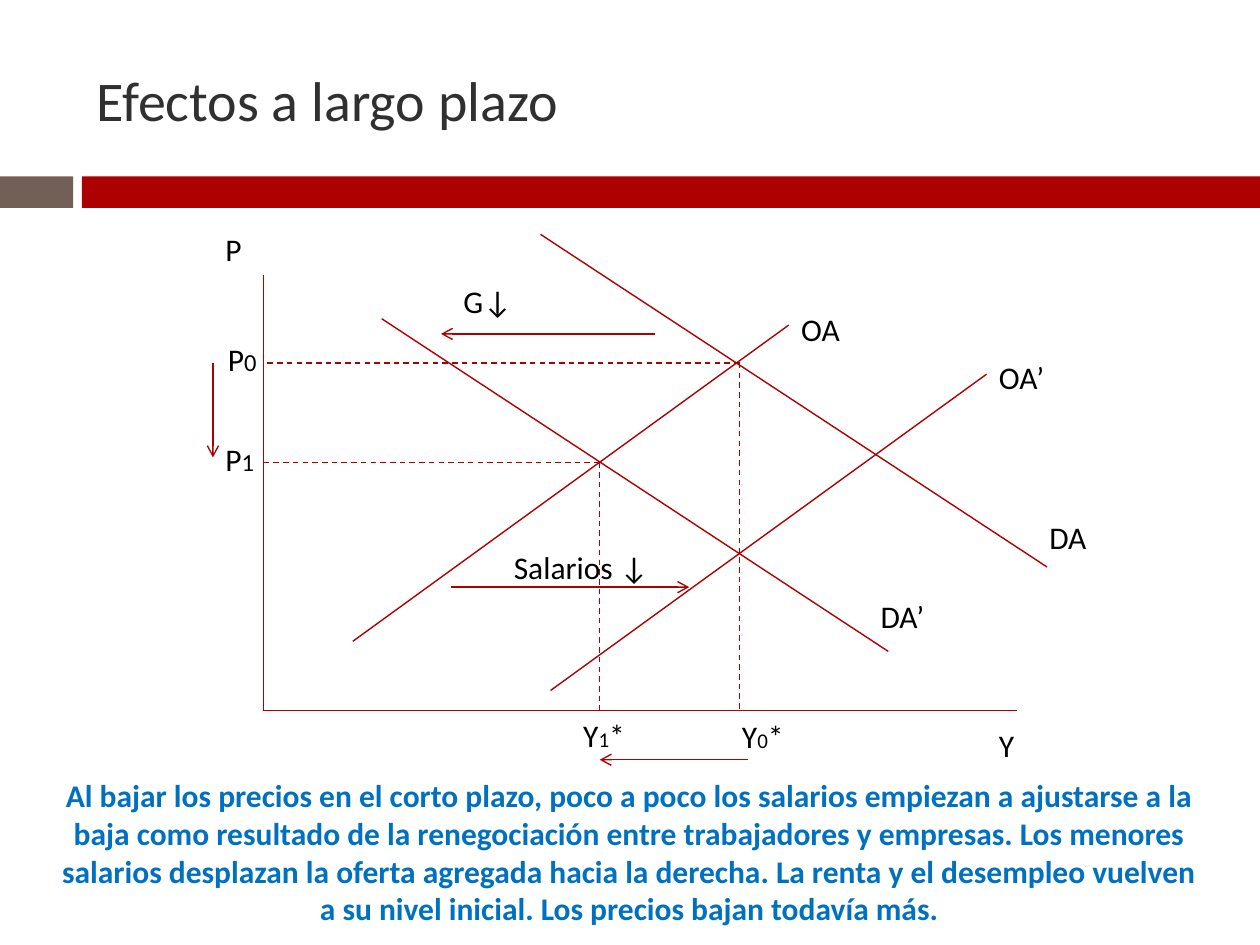
from lxml.etree import SubElement
from pptx import Presentation
from pptx.dml.color import RGBColor
from pptx.enum.dml import MSO_LINE
from pptx.enum.shapes import MSO_CONNECTOR, MSO_SHAPE
from pptx.enum.text import MSO_ANCHOR, PP_ALIGN
from pptx.oxml.ns import qn
from pptx.util import Inches, Pt

FONT = "Calibri"
COLORS = {"red": "AD0101", "taupe": "726056", "title": "303030",
          "text": "000000", "note": "0070C0"}

TITLE = "Efectos a largo plazo"
NOTE = ("Al bajar los precios en el corto plazo, poco a poco los salarios "
        "empiezan a ajustarse a la baja como resultado de la renegociación "
        "entre trabajadores y empresas. Los menores salarios desplazan la "
        "oferta agregada hacia la derecha. La renta y el desempleo vuelven "
        "a su nivel inicial. Los precios bajan todavía más.")

# Bands under the title: left, width, color
BANDS = [(0, 0.58, "taupe"), (0.65, 9.35, "red")]

# Axes: origin, top of P, end of Y
LEFT, BASE, TOP, RIGHT = 2.09, 5.64, 2.18, 8.07

# Curves: start points of each pair, and the run and rise they share
SUPPLY = ([(2.8, 5.09), (4.37, 5.48)], (3.46, -2.51))
DEMAND = ([(3.03, 2.53), (4.29, 1.86)], (4.02, 2.64))

# Short-run equilibria, guided to both axes
POINTS = [(4.76, 3.67), (5.87, 2.88)]

# Shift arrows: from, to
ARROWS = [
    ((5.2, 2.65), (3.5, 2.65)),
    ((1.69, 2.88), (1.69, 3.63)),
    ((5.94, 6.03), (4.76, 6.03)),
    ((3.58, 4.66), (5.47, 4.66)),
]

# Labels: left, top, width, runs of (text, size)
LABELS = [
    (7.83, 5.71, 0.47, [("Y", 18)]),
    (1.69, 1.78, 0.63, [("P", 18)]),
    (6.26, 2.41, 1.02, [("OA", 18)]),
    (7.83, 2.79, 1.02, [("OA’", 18)]),
    (8.23, 4.06, 1.5, [("DA", 18)]),
    (6.89, 4.69, 1.5, [("DA’", 18)]),
    (1.71, 2.65, 0.63, [("P", 18), ("0", 14)]),
    (1.69, 3.44, 0.63, [("P", 18), ("1", 14)]),
    (4.53, 5.63, 0.79, [("Y", 18), ("1", 12), ("*", 18)]),
    (5.79, 5.64, 0.79, [("Y", 18), ("0", 12), ("*", 18)]),
    (3.58, 2.19, 1.73, [("G↓", 18)]),
    (3.98, 4.3, 1.5, [("Salarios ↓", 18)]),
]


def rgb(name):
    return RGBColor.from_string(COLORS[name])


def add_band(slide, left, width, color):
    band = slide.shapes.add_shape(MSO_SHAPE.RECTANGLE, Inches(left),
                                  Inches(1.4), Inches(width), Inches(0.25))
    band.shadow.inherit = False
    band.fill.solid()
    band.fill.fore_color.rgb = rgb(color)
    band.line.fill.background()


def add_line(slide, start, end, dash=False, arrow=False):
    ends = [Inches(v) for v in (*start, *end)]
    line = slide.shapes.add_connector(MSO_CONNECTOR.STRAIGHT, *ends)
    line.line.color.rgb = rgb("red")
    line.line.width = Pt(0.79)
    if dash:
        line.line.dash_style = MSO_LINE.DASH
    props = line._element.spPr
    if arrow:
        SubElement(props.find(qn("a:ln")), qn("a:tailEnd"), type="arrow")
    SubElement(props, qn("a:effectLst"))


def add_text(slide, box, runs, color="text", bold=False,
             align=PP_ALIGN.LEFT, anchor=MSO_ANCHOR.TOP):
    frame = slide.shapes.add_textbox(*[Inches(v) for v in box]).text_frame
    frame.word_wrap = True
    frame.vertical_anchor = anchor
    para = frame.paragraphs[0]
    para.alignment = align
    for text, size in runs:
        run = para.add_run()
        run.text = text
        run.font.name = FONT
        run.font.size = Pt(size)
        run.font.bold = bold
        run.font.color.rgb = rgb(color)


def main():
    deck = Presentation()
    deck.slide_width, deck.slide_height = Inches(10), Inches(7.5)
    slide = deck.slides.add_slide(deck.slide_layouts[6])

    for band in BANDS:
        add_band(slide, *band)
    add_text(slide, (0.67, 0.25, 8.92, 1.08), [(TITLE, 32)], "title",
             anchor=MSO_ANCHOR.MIDDLE)

    for end in [(LEFT, TOP), (RIGHT, BASE)]:
        add_line(slide, (LEFT, BASE), end)
    for starts, (run, rise) in (SUPPLY, DEMAND):
        for x, y in starts:
            add_line(slide, (x, y), (x + run, y + rise))
    for x, y in POINTS:
        for end in [(LEFT, y), (x, BASE)]:
            add_line(slide, (x, y), end, dash=True)
    for start, end in ARROWS:
        add_line(slide, start, end, arrow=True)

    for left, top, width, runs in LABELS:
        add_text(slide, (left, top, width, 0.4), runs)
    add_text(slide, (0.35, 6.11, 9.29, 1.31), [(NOTE, 18)], "note",
             bold=True, align=PP_ALIGN.CENTER)

    deck.save("out.pptx")


if __name__ == "__main__":
    main()
